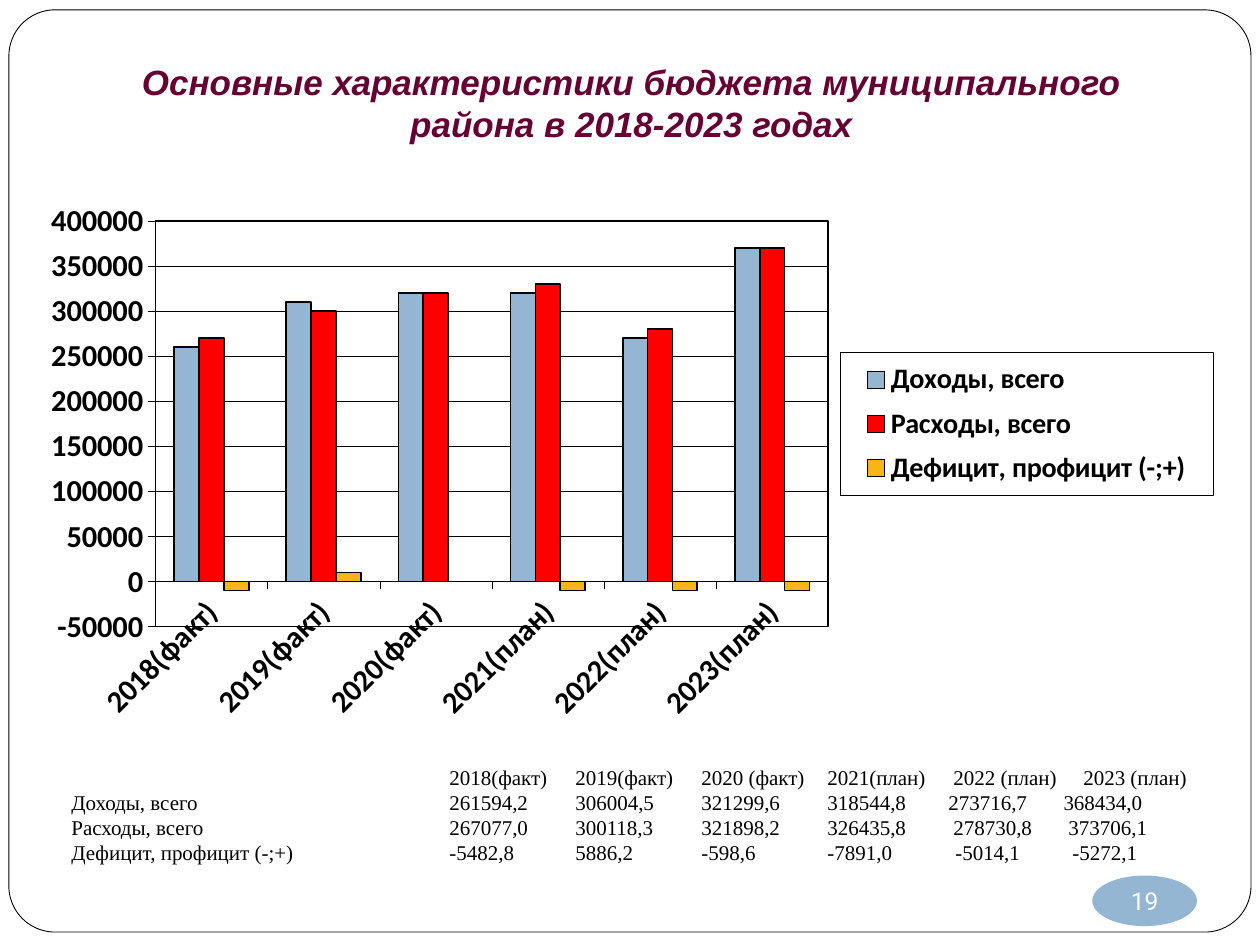
from lxml.etree import SubElement
from pptx import Presentation
from pptx.chart.data import CategoryChartData
from pptx.dml.color import RGBColor
from pptx.enum.chart import XL_CHART_TYPE, XL_LEGEND_POSITION, XL_TICK_MARK
from pptx.enum.shapes import MSO_SHAPE
from pptx.enum.text import MSO_ANCHOR, PP_ALIGN
from pptx.oxml import parse_xml
from pptx.oxml.ns import nsdecls, qn
from pptx.util import Cm, Pt

# Content
TITLE = "Основные характеристики бюджета муниципального района в 2018-2023 годах"
PAGE = "19"
YEARS = ["2018(факт)", "2019(факт)", "2020(факт)",
         "2021(план)", "2022(план)", "2023(план)"]
HEADS = ["2018(факт)", "2019(факт)", "2020 (факт)",
         "2021(план)", "2022 (план)", "2023 (план)"]
ROWS = [
    ("Доходы, всего", "94B6D2",
     [261594.2, 306004.5, 321299.6, 318544.8, 273716.7, 368434.0]),
    ("Расходы, всего", "FF0000",
     [267077.0, 300118.3, 321898.2, 326435.8, 278730.8, 373706.1]),
    ("Дефицит, профицит (-;+)", "F7B615",
     [-5482.8, 5886.2, -598.6, -7891.0, -5014.1, -5272.1]),
]

# Tab stops in cm: four shared, then the last two of each line
STOPS = [7.62 + 2.54 * i for i in range(4)]
ENDS = [(17.78, 20.4), (17.68, 20), (17.78, 20.1), (17.82, 20.18)]

THEME = {
    "ink": "000000", "paper": "FFFFFF", "title": "660033", "badge": "94B6D2",
    "title_pt": 20, "axis_pt": 17.4, "key_pt": 16.1, "body_pt": 12, "page_pt": 14,
}


def color(name):
    return RGBColor.from_string(THEME.get(name, name))


def style(font, face, size, tint, bold=False, slant=False):
    font.name, font.size = face, Pt(THEME[size])
    font.bold, font.italic = bold, slant
    font.color.rgb = color(tint)


def stroke(line, width):
    line.color.rgb = color("ink")
    line.width = Pt(width)


def box(*lengths):
    return [Cm(n) for n in lengths]


def layout(x, y, w, h, inner=False):
    target = '<c:layoutTarget val="inner"/>' if inner else ""
    return parse_xml(
        f'<c:layout {nsdecls("c")}><c:manualLayout>{target}'
        '<c:xMode val="edge"/><c:yMode val="edge"/>'
        f'<c:x val="{x}"/><c:y val="{y}"/><c:w val="{w}"/><c:h val="{h}"/>'
        '</c:manualLayout></c:layout>')


def border(width):
    return parse_xml(
        f'<c:spPr {nsdecls("c", "a")}><a:noFill/><a:ln w="{Pt(width)}"><a:solidFill>'
        f'<a:srgbClr val="{THEME["ink"]}"/></a:solidFill></a:ln></c:spPr>')


def clear(node):
    for old in node.xpath("c:layout | c:spPr"):
        node.remove(old)


prs = Presentation()
prs.slide_width, prs.slide_height = box(25.4, 19.05)
slide = prs.slides.add_slide(prs.slide_layouts[5])
shapes = slide.shapes

# Title
title = shapes.title
title.left, title.top, title.width, title.height = box(1.3, 0, 22.86, 3.16)
frame = title.text_frame
frame.text = TITLE
frame.word_wrap = True
frame.vertical_anchor = MSO_ANCHOR.BOTTOM
frame.margin_bottom = Cm(0.25)
frame.paragraphs[0].alignment = PP_ALIGN.CENTER
style(frame.paragraphs[0].runs[0].font, "Arial", "title_pt", "title", True, True)

# Rounded border behind everything
panel = shapes.add_shape(MSO_SHAPE.ROUNDED_RECTANGLE, *box(0.18, 0.2, 25.04, 18.59))
panel.adjustments[0] = 0.05
panel.shadow.inherit = False
panel.fill.solid()
panel.fill.fore_color.rgb = color("paper")
stroke(panel.line, 0.5)
title.element.addprevious(panel.element)

# Chart, drawn to the nearest ten thousand
data = CategoryChartData()
data.categories = YEARS
for name, tint, vals in ROWS:
    data.add_series(name, [int(round(v, -4)) for v in vals])
chart = shapes.add_chart(XL_CHART_TYPE.COLUMN_CLUSTERED,
                         *box(0.47, 3.54, 24.22, 11.51), data).chart
chart.has_title = False
style(chart.font, "Calibri", "axis_pt", "ink", True)
plot = chart.plots[0]
plot.gap_width, plot.overlap, plot.vary_by_categories = 150, 0, False
for series, (name, tint, vals) in zip(plot.series, ROWS):
    series.invert_if_negative = False
    series.format.fill.solid()
    series.format.fill.fore_color.rgb = color(tint)
    stroke(series.format.line, 1)

# Axes
for axis in (chart.category_axis, chart.value_axis):
    style(axis.tick_labels.font, "Calibri", "axis_pt", "ink", True)
    axis.major_tick_mark = XL_TICK_MARK.OUTSIDE
    axis.minor_tick_mark = XL_TICK_MARK.NONE
    stroke(axis.format.line, 0.25)
scale = chart.value_axis
scale.minimum_scale, scale.maximum_scale, scale.major_unit = -50000, 400000, 50000
scale.has_major_gridlines = True
stroke(scale.major_gridlines.format.line, 0.25)
scale.tick_labels.number_format = "0"
scale.tick_labels.number_format_is_linked = False
root = chart.element
root.xpath(".//c:catAx/c:txPr/a:bodyPr")[0].set("rot", "-2700000")

# Plot frame and legend
area = root.xpath(".//c:plotArea")[0]
clear(area)
area.insert(0, layout(0.11, 0.08, 0.56, 0.71, inner=True))
area.append(border(1))
chart.has_legend = True
legend = chart.legend
legend.position = XL_LEGEND_POSITION.RIGHT
legend.include_in_layout = False
style(legend.font, "Calibri", "key_pt", "ink", True)
key = root.xpath(".//c:legend")[0]
clear(key)
overlay = key.xpath("c:overlay")[0]
overlay.addprevious(layout(0.68, 0.31, 0.31, 0.25))
overlay.addnext(border(0.25))

# Page badge
badge = shapes.add_shape(MSO_SHAPE.OVAL, *box(22.02, 17.65, 2.11, 1.02))
badge.shadow.inherit = False
badge.fill.solid()
badge.fill.fore_color.rgb = color("badge")
badge.line.fill.background()
frame = badge.text_frame
frame.margin_left = frame.margin_right = frame.margin_top = frame.margin_bottom = 0
frame.word_wrap = False
frame.vertical_anchor = MSO_ANCHOR.MIDDLE
frame.text = PAGE
frame.paragraphs[0].alignment = PP_ALIGN.CENTER
style(frame.paragraphs[0].runs[0].font, "Roboto", "page_pt", "paper")

# Figures set on tab stops
lines = [["", *HEADS]]
for name, tint, vals in ROWS:
    lines.append([name, *(f"{v:.1f}".replace(".", ",") for v in vals)])
frame = shapes.add_textbox(*box(1.19, 15.28, 23.62, 2.82)).text_frame
frame.word_wrap = True
frame.text = "\n".join("\t".join(line) for line in lines)
for para, ends in zip(frame.paragraphs, ENDS):
    para.alignment = PP_ALIGN.LEFT
    tabs = SubElement(para._p.get_or_add_pPr(), qn("a:tabLst"))
    for stop in [*STOPS, *ends]:
        SubElement(tabs, qn("a:tab"), pos=str(Cm(stop)), algn="l")
    style(para.runs[0].font, "Times New Roman", "body_pt", "ink")

prs.save("out.pptx")
